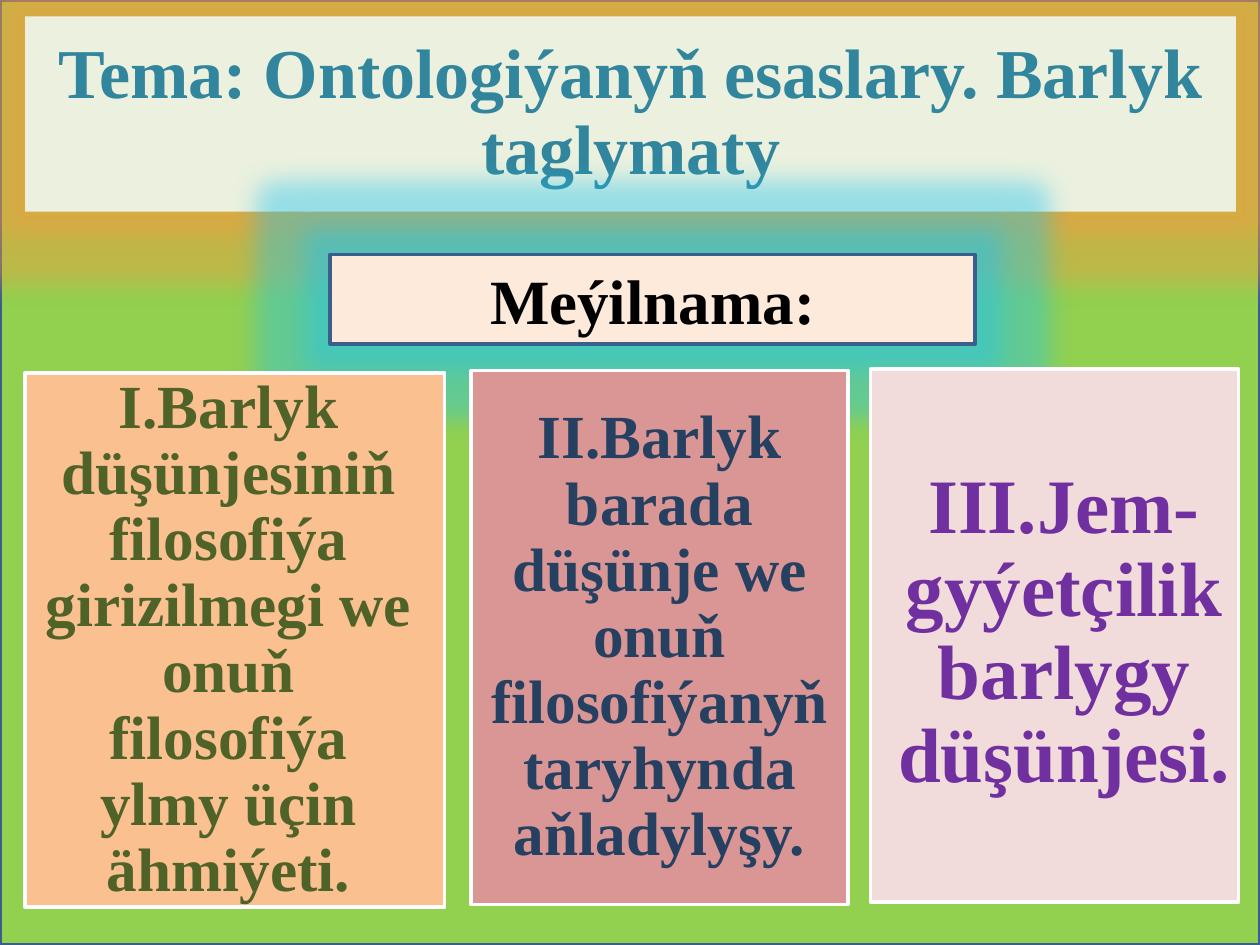
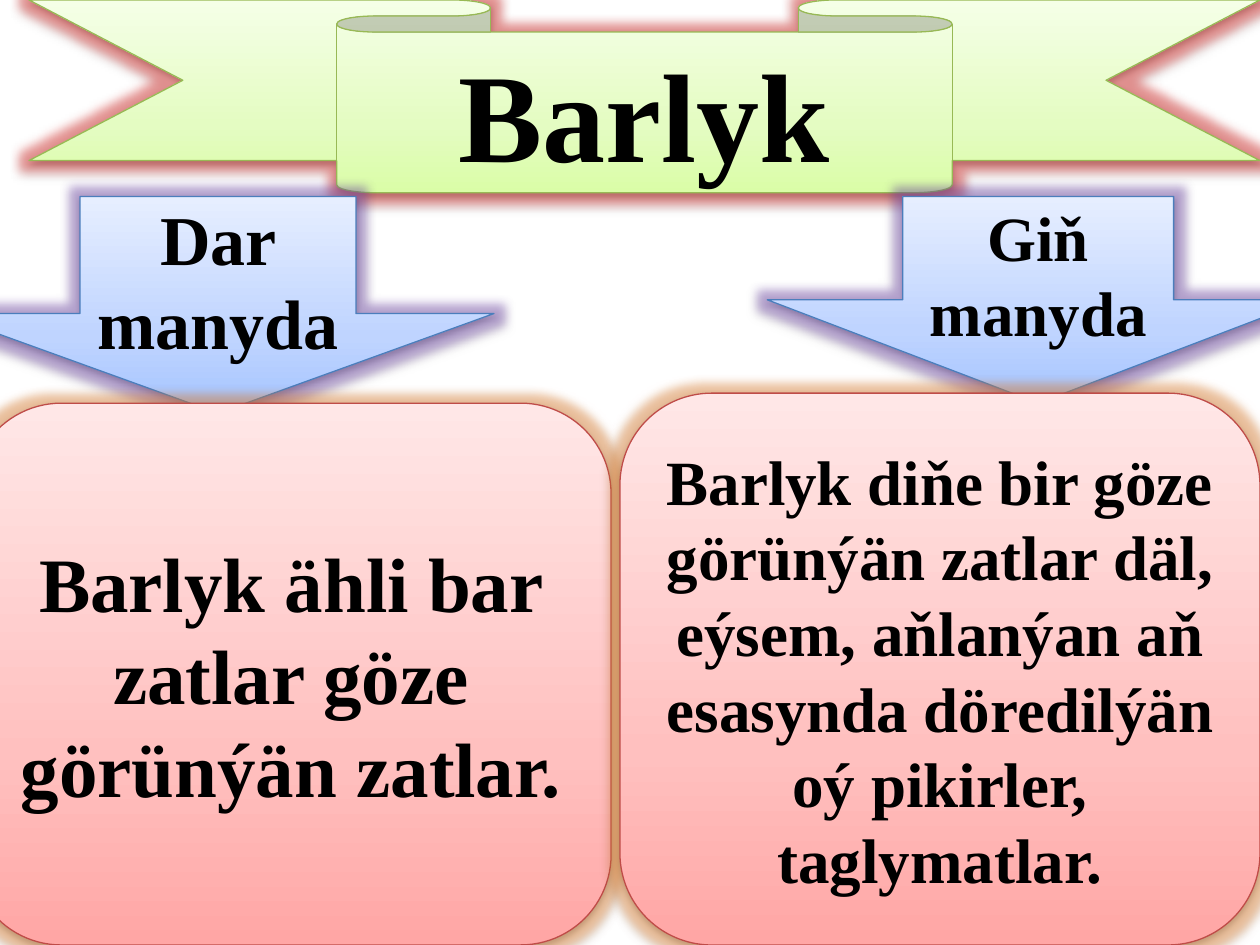
"""Build two slides on ontology: the lecture plan and the two senses of being."""
from copy import deepcopy
from dataclasses import dataclass
from typing import Any

from lxml.etree import SubElement
from pptx import Presentation
from pptx.dml.color import RGBColor
from pptx.enum.shapes import MSO_SHAPE as Shape
from pptx.enum.text import MSO_ANCHOR as Anchor, PP_ALIGN as Align
from pptx.oxml.ns import qn
from pptx.util import Inches, Pt

FONT = "Times New Roman"
BLACK, WHITE, NAVY = "000000", "FFFFFF", "3A5F8C"
GREEN_BLEND = ("DAFDA7", "E4FCC2", "F5FFE7")
BLUE_BLEND = ("A4C4FF", "BFD4FF", "E6EEFF")
RED_BLEND = ("FFA6A5", "FFC0BF", "FFE7E7")
BLEND_STOPS = (0, 35000, 100000)
RED_GLOW, PURPLE_GLOW, ORANGE_GLOW, CYAN_GLOW = "EB2522", "7A4DB9", "FF953D", "1DC3F4"


@dataclass(frozen=True)
class Label:
    """Wording and type settings of one centred text."""
    text: str
    size: int
    color: str = BLACK
    spacing: float | None = None
    inset: float | None = None


@dataclass(frozen=True)
class Panel:
    """A filled shape with an optional label, line, glow and shadow."""
    at: tuple[float, float, float, float]
    fill: str | tuple[str, ...]
    line: str | None = None
    label: Label | None = None
    kind: Any = Shape.RECTANGLE
    line_width: float = 2
    glow: str | None = None
    glow_size: float = 28
    shadow: bool = False
    adjust: tuple[float, ...] = ()


@dataclass(frozen=True)
class Card:
    """A framed box with a text frame placed over it."""
    box: tuple[float, float, float, float]
    frame: tuple[float, float, float, float]
    fill: str
    label: Label


def color_of(code: str) -> RGBColor:
    """Turn a hex string into a colour."""
    return RGBColor.from_string(code)


def set_all(target: Any, values: dict[str, Any]) -> None:
    """Set each named attribute on the target."""
    for name, value in values.items():
        setattr(target, name, value)


def write_label(box: Any, label: Label) -> None:
    """Write one centred bold paragraph into a shape."""
    frame = box.text_frame
    set_all(frame, {"word_wrap": True, "vertical_anchor": Anchor.MIDDLE})
    if label.inset is not None:
        sides = ("left", "top", "right", "bottom")
        set_all(frame, {f"margin_{side}": Inches(label.inset) for side in sides})
    para = frame.paragraphs[0]
    set_all(para, {"alignment": Align.CENTER, "line_spacing": label.spacing})
    span = para.add_run()
    span.text = label.text
    set_all(span.font, {"name": FONT, "size": Pt(label.size), "bold": True})
    span.font.color.rgb = color_of(label.color)


def blend(box: Any, colors: tuple[str, ...]) -> None:
    """Fill a shape with an upward gradient of three colours."""
    box.fill.gradient()
    box.fill.gradient_angle = 90
    first = next(box._element.spPr.iter(qn("a:gs")))
    first.getparent().insert(1, deepcopy(first))
    nodes = box._element.spPr.iter(qn("a:gs"))
    for node, stop, code in zip(nodes, BLEND_STOPS, colors):
        node.set("pos", str(stop))
        for child in list(node):
            node.remove(child)
        SubElement(node, qn("a:srgbClr"), val=code)


def add_effect(box: Any, tag: str, color: str, alpha: int, **options: str) -> None:
    """Append one coloured effect to the shape's effect list."""
    effects = box._element.spPr.find(qn("a:effectLst"))
    effect = SubElement(effects, qn(tag), **options)
    tint = SubElement(effect, qn("a:srgbClr"), val=color)
    SubElement(tint, qn("a:alpha"), val=str(alpha * 1000))


def draw_panel(page: Any, panel: Panel) -> None:
    """Draw one panel with its effects and label."""
    box = page.shapes.add_shape(panel.kind, *map(Inches, panel.at))
    box.shadow.inherit = False
    for index, value in enumerate(panel.adjust):
        box.adjustments[index] = value
    if isinstance(panel.fill, tuple):
        blend(box, panel.fill)
    else:
        box.fill.solid()
        box.fill.fore_color.rgb = color_of(panel.fill)
    if panel.line:
        box.line.color.rgb = color_of(panel.line)
        box.line.width = Pt(panel.line_width)
    else:
        box.line.fill.background()
    if panel.glow:
        add_effect(box, "a:glow", panel.glow, 40, rad=str(Pt(panel.glow_size)))
    if panel.shadow:
        add_effect(box, "a:outerShdw", BLACK, 38, blurRad=str(Pt(3.1)),
                   dist=str(Pt(1.6)), dir="5400000", rotWithShape="0")
    if panel.label:
        write_label(box, panel.label)


def draw_card(page: Any, card: Card) -> None:
    """Draw a card's box and the text over it."""
    draw_panel(page, Panel(card.box, card.fill, WHITE))
    write_label(page.shapes.add_textbox(*map(Inches, card.frame)), card.label)


def glossy(kind: Any, at: tuple[float, float, float, float], label: Label,
           adjust: tuple[float, ...] = ()) -> Panel:
    """Describe a gradient panel in the style of its shape kind."""
    fill, line, glow = GLOSSY_STYLES[kind]
    return Panel(at, fill, line, label, kind, 0.75, glow, 11, True, adjust)


GLOSSY_STYLES = {
    Shape.DOWN_RIBBON: (GREEN_BLEND, "98B955", RED_GLOW),
    Shape.DOWN_ARROW: (BLUE_BLEND, "4B7EBC", PURPLE_GLOW),
    Shape.ROUNDED_RECTANGLE: (RED_BLEND, "BF4C48", ORANGE_GLOW),
}

PLAN_PANELS = (
    Panel((0, 0, 10, 7.5), "92D050", NAVY),
    Panel((0.2, 0.13, 9.61, 1.55), "EBF1DE", glow=ORANGE_GLOW,
          label=Label("Tema: Ontologiýanyň esaslary. Barlyk taglymaty", 40, "31859C", 0.9, 0.17)),
    Panel((2.62, 2.02, 5.12, 0.71), "FDEADA", NAVY, Label("Meýilnama:", 36), glow=CYAN_GLOW),
)

PLAN_CARDS = (
    Card((0.2, 2.96, 3.33, 4.24), (0.2, 2.96, 3.23, 4.24), "FAC090",
         Label("I.Barlyk düşünjesiniň filosofiýa girizilmegi we onuň filosofiýa ylmy üçin ähmiýeti.",
               35, "4F6228", 0.9, 0.15)),
    Card((3.74, 2.94, 2.99, 4.24), (3.74, 2.94, 2.99, 4.24), "D99694",
         Label("II.Barlyk barada düşünje we onuň filosofiýanyň taryhynda aňladylyşy.",
               35, "254061", 0.9, 0.15)),
    Card((6.91, 2.93, 2.92, 4.23), (6.91, 2.89, 3.07, 4.27), "F2DCDB",
         Label("III.Jem-gyýetçilik barlygy düşünjesi.", 44, "7030A0", 0.9, 0.18)),
)

SENSE_PANELS = (
    glossy(Shape.DOWN_RIBBON, (0.23, 0, 9.77, 1.53), Label("Barlyk", 72)),
    glossy(Shape.DOWN_ARROW, (-0.46, 1.56, 4.38, 1.72), Label("Dar manyda", 40), (0.5, 0.46)),
    glossy(Shape.DOWN_ARROW, (6.09, 1.56, 4.3, 1.64), Label("Giň manyda", 36)),
    glossy(Shape.ROUNDED_RECTANGLE, (-0.23, 3.2, 5.08, 4.3),
           Label("Barlyk ähli bar zatlar göze görünýän zatlar.", 44)),
    glossy(Shape.ROUNDED_RECTANGLE, (4.92, 3.12, 5.08, 4.38),
           Label("Barlyk diňe bir göze görünýän zatlar däl, eýsem, aňlanýan aň esasynda "
                 "döredilýän oý pikirler, taglymatlar.", 36)),
)


def main() -> None:
    """Build the deck and save it."""
    deck = Presentation()
    set_all(deck, {"slide_width": Inches(10), "slide_height": Inches(7.5)})
    for panels, cards in ((PLAN_PANELS, PLAN_CARDS), (SENSE_PANELS, ())):
        page = deck.slides.add_slide(deck.slide_layouts[6])
        for panel in panels:
            draw_panel(page, panel)
        for card in cards:
            draw_card(page, card)
    deck.save("out.pptx")


if __name__ == "__main__":
    main()
